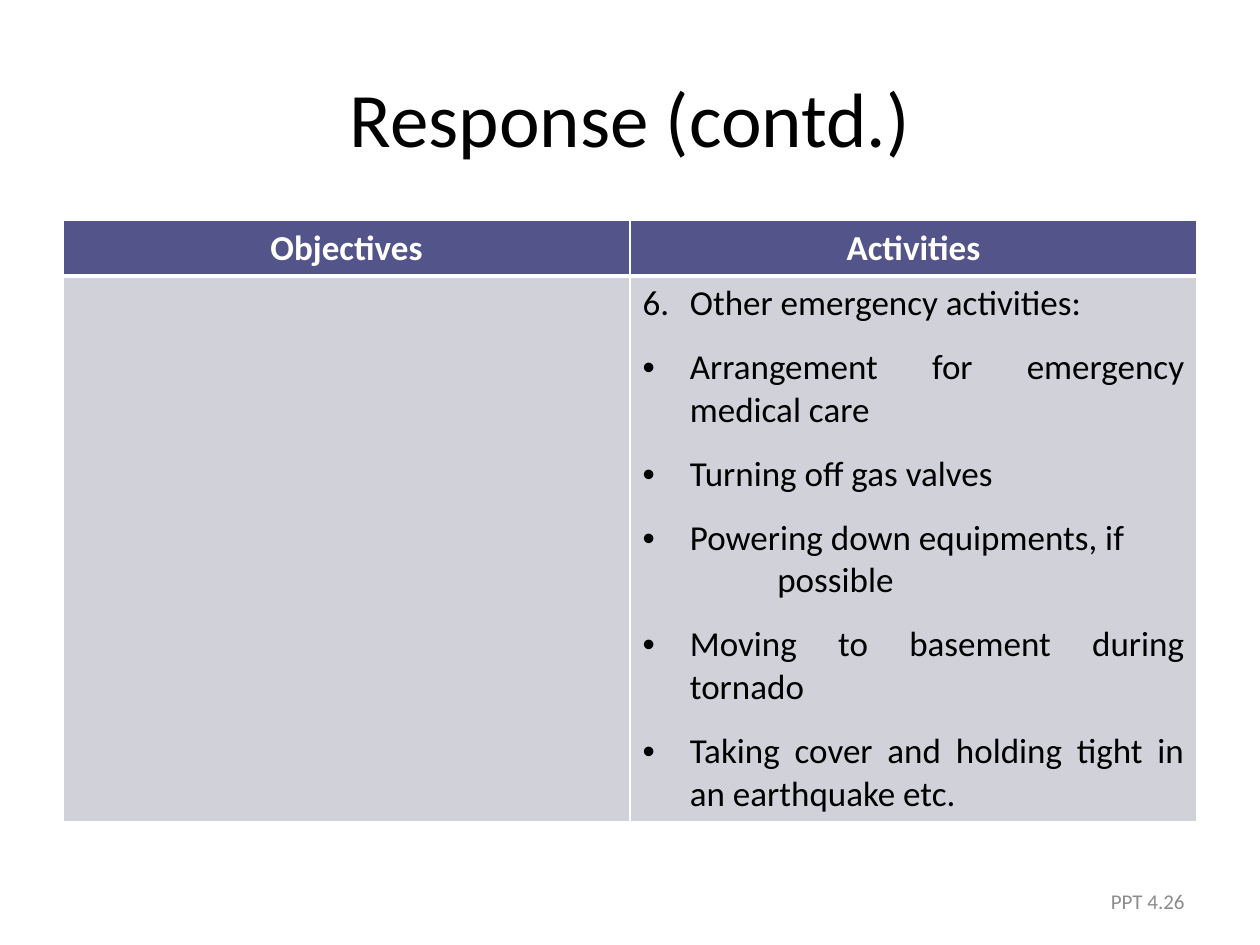
"""Build the slide on emergency response activities."""
from dataclasses import dataclass

from pptx import Presentation
from pptx.dml.color import RGBColor
from pptx.enum.text import MSO_ANCHOR, PP_ALIGN
from pptx.oxml.ns import qn
from pptx.util import Pt
from lxml import etree

LEFT, CENTER, RIGHT, JUSTIFY = (
    PP_ALIGN.LEFT, PP_ALIGN.CENTER, PP_ALIGN.RIGHT, PP_ALIGN.JUSTIFY)
MIDDLE = MSO_ANCHOR.MIDDLE
TITLE_ONLY = 5
HANGING = 27
WHITE, BLACK, GREY = "FFFFFF", "000000", "8C8C8C"
HEADER_FILL, BODY_FILL = "53548A", "D1D1DA"
HEADINGS = ("Objectives", "Activities")


@dataclass(frozen=True)
class Activity:
    text: str
    bullet: str = "•"
    align: PP_ALIGN = JUSTIFY
    margin: float = HANGING
    after: float = 12


ACTIVITIES = (
    Activity("Other emergency activities:", bullet="6."),
    Activity("Arrangement for emergency medical care"),
    Activity("Turning off gas valves"),
    Activity("Powering down equipments, if", align=LEFT, after=0),
    Activity("possible", bullet="", align=LEFT, margin=77),
    Activity("Moving to basement during tornado"),
    Activity("Taking cover and holding tight in an earthquake etc."),
)


def rgb(value: str) -> RGBColor:
    """Turn a hex string into a colour."""
    return RGBColor.from_string(value)


def write(paragraph, text: str, *, size: float = 20, color: str = BLACK,
          bold: bool = False, align: PP_ALIGN = LEFT, after: float = 0) -> None:
    """Write one formatted run into a paragraph."""
    paragraph.alignment = align
    paragraph.space_after = Pt(after)
    run = paragraph.add_run()
    run.text = text
    run.font.name = "Calibri"
    run.font.size = Pt(size)
    run.font.bold = bold
    run.font.color.rgb = rgb(color)


def set_bullet(paragraph, activity: Activity) -> None:
    """Set the indent and the bullet or number of an activity."""
    properties = paragraph._p.get_or_add_pPr()
    properties.set("marL", str(Pt(activity.margin)))
    properties.set("indent", str(Pt(-HANGING if activity.bullet else 0)))
    if activity.bullet == "6.":
        etree.SubElement(properties, qn("a:buFont"), typeface="+mj-lt")
        etree.SubElement(properties, qn("a:buAutoNum"),
                         type="arabicPeriod", startAt="6")
    elif activity.bullet:
        etree.SubElement(properties, qn("a:buFont"), typeface="Arial")
        etree.SubElement(properties, qn("a:buChar"), char=activity.bullet)
    else:
        etree.SubElement(properties, qn("a:buNone"))


def style_cell(cell, fill: str, *, top: float = 1, bottom: float = 1) -> None:
    """Give a cell white borders and a plain fill."""
    properties = cell._tc.get_or_add_tcPr()
    for side, width in (("L", 1), ("R", 1), ("T", top), ("B", bottom)):
        line = etree.SubElement(properties, qn(f"a:ln{side}"), w=str(Pt(width)))
        solid = etree.SubElement(line, qn("a:solidFill"))
        etree.SubElement(solid, qn("a:srgbClr"), val=WHITE)
    cell.fill.solid()
    cell.fill.fore_color.rgb = rgb(fill)


def add_title(slide, text: str) -> None:
    """Place and write the slide title."""
    title = slide.shapes.title
    title.left, title.top, title.width, title.height = (
        Pt(36), Pt(21.6), Pt(648), Pt(90))
    title.text_frame.vertical_anchor = MIDDLE
    write(title.text_frame.paragraphs[0], text, size=44, align=CENTER)


def add_activity_table(slide) -> None:
    """Draw the table of objectives and activities."""
    table = slide.shapes.add_table(
        2, len(HEADINGS), Pt(36), Pt(126), Pt(648), Pt(343)).table
    table.rows[0].height, table.rows[1].height = Pt(31.6), Pt(311.4)
    for column, heading in enumerate(HEADINGS):
        header, body = table.cell(0, column), table.cell(1, column)
        style_cell(header, HEADER_FILL, bottom=3)
        style_cell(body, BODY_FILL, top=3)
        write(header.text_frame.paragraphs[0], heading, color=WHITE,
              bold=True, align=CENTER, after=12)
    frame = table.cell(1, 1).text_frame
    for index, activity in enumerate(ACTIVITIES):
        paragraph = frame.add_paragraph() if index else frame.paragraphs[0]
        write(paragraph, activity.text, align=activity.align,
              after=activity.after)
        set_bullet(paragraph, activity)


def add_slide_number(slide, text: str) -> None:
    """Write the slide number at the bottom right."""
    frame = slide.shapes.add_textbox(
        Pt(516), Pt(500.4), Pt(168), Pt(28.8)).text_frame
    frame.word_wrap = True
    frame.vertical_anchor = MIDDLE
    write(frame.paragraphs[0], text, size=12, color=GREY, align=RIGHT)


def main() -> None:
    """Build and save the presentation."""
    deck = Presentation()
    deck.slide_width, deck.slide_height = Pt(720), Pt(540)
    slide = deck.slides.add_slide(deck.slide_layouts[TITLE_ONLY])
    add_title(slide, "Response (contd.)")
    add_activity_table(slide)
    add_slide_number(slide, "PPT 4.26")
    deck.save("out.pptx")


if __name__ == "__main__":
    main()
